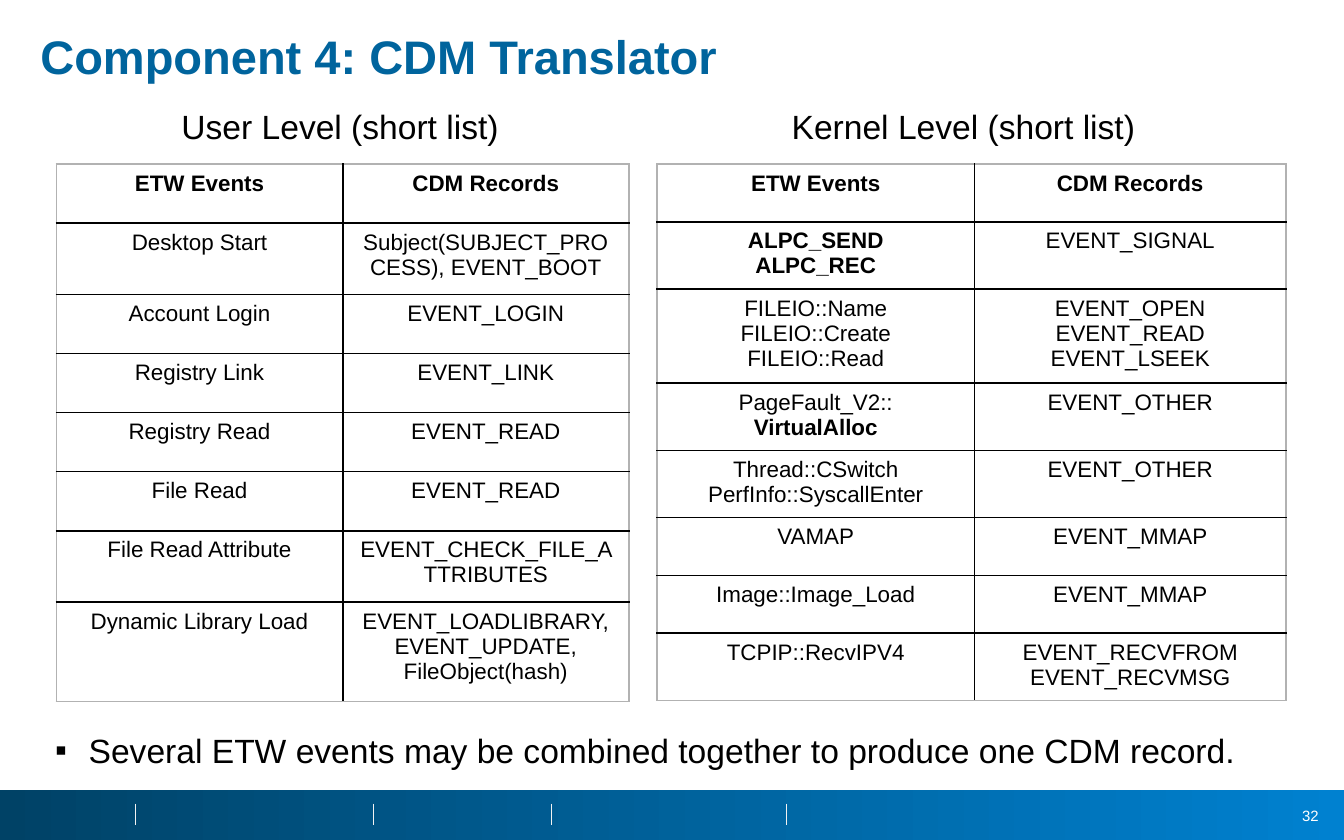
from pptx import Presentation
from pptx.dml.color import RGBColor
from pptx.enum.shapes import MSO_CONNECTOR, MSO_SHAPE
from pptx.enum.text import MSO_ANCHOR, PP_ALIGN
from pptx.oxml.ns import qn
from pptx.util import Inches, Pt
from lxml.etree import SubElement

BLACK = RGBColor(0, 0, 0)
WHITE = RGBColor(255, 255, 255)
BLUE = RGBColor(0x00, 0x64, 0x9D)
NAVY = RGBColor(0x00, 0x42, 0x66)
SKY = RGBColor(0x00, 0x81, 0xD0)
PALE = RGBColor(0xF2, 0xF2, 0xF2)
GREY = RGBColor(0xB2, 0xB2, 0xB2)

# A leading * marks a bold line.
HEAD = ("*ETW Events", "*CDM Records")
USER = [
    (0.44, *HEAD),
    (0.53, "Desktop Start", "Subject(SUBJECT_PROCESS), EVENT_BOOT"),
    (0.44, "Account Login", "EVENT_LOGIN"),
    (0.44, "Registry Link", "EVENT_LINK"),
    (0.44, "Registry Read", "EVENT_READ"),
    (0.44, "File Read", "EVENT_READ"),
    (0.53, "File Read Attribute", "EVENT_CHECK_FILE_ATTRIBUTES"),
    (0.74, "Dynamic Library Load",
     "EVENT_LOADLIBRARY, EVENT_UPDATE, FileObject(hash)"),
]
KERNEL = [
    (0.43, *HEAD),
    (0.5, "*ALPC_SEND\n*ALPC_REC", "EVENT_SIGNAL"),
    (0.7, "FILEIO::Name\nFILEIO::Create\nFILEIO::Read",
     "EVENT_OPEN\nEVENT_READ\nEVENT_LSEEK"),
    (0.5, "PageFault_V2::\n*VirtualAlloc", "EVENT_OTHER"),
    (0.5, "Thread::CSwitch\nPerfInfo::SyscallEnter", "EVENT_OTHER"),
    (0.43, "VAMAP", "EVENT_MMAP"),
    (0.43, "Image::Image_Load", "EVENT_MMAP"),
    (0.5, "TCPIP::RecvIPV4", "EVENT_RECVFROM\nEVENT_RECVMSG"),
]


def style(para, size, color=BLACK, bold=False, align=PP_ALIGN.LEFT):
    para.alignment = align
    font = para.font
    font.name, font.size, font.bold = "Arial", Pt(size), bold
    font.color.rgb = color


def add_title(slide, text):
    title = slide.shapes.title
    title.left, title.top = Inches(0.2), Inches(0.2)
    title.width, title.height = Inches(9.59), Inches(0.36)
    frame = title.text_frame
    frame.text = text
    frame.vertical_anchor = MSO_ANCHOR.TOP
    frame.paragraphs[0].line_spacing = 0.9
    style(frame.paragraphs[0], 25.2, BLUE, True)


def add_text(slide, text, x, y, w, h, inset=0.05):
    box = slide.shapes.add_textbox(Inches(x), Inches(y), Inches(w), Inches(h))
    frame = box.text_frame
    frame.word_wrap = True
    frame.margin_left = frame.margin_right = Inches(inset)
    frame.text = text
    return frame


def add_label(slide, text, x, w):
    frame = add_text(slide, text, x, 0.74, w, 0.4)
    frame.word_wrap = False
    style(frame.paragraphs[0], 18)


def add_bullet(slide, text):
    para = add_text(slide, text, 0.36, 5.38, 9.59, 0.47).paragraphs[0]
    props = para._p.get_or_add_pPr()
    props.set("marL", str(Inches(0.25)))
    props.set("indent", str(-Inches(0.25)))
    SubElement(props, qn("a:buFont"), typeface="Arial")
    SubElement(props, qn("a:buChar"), char="▪")
    style(para, 18)


def add_edge(cell, side, color):
    line = SubElement(cell._tc.get_or_add_tcPr(), qn(f"a:{side}"),
                      w=str(Pt(1)))
    fill = SubElement(line, qn("a:solidFill"))
    SubElement(fill, qn("a:srgbClr"), val=str(color))


def fill_cell(cell, text, edges):
    """Write the lines of a cell; edges maps each side to its colour."""
    for side, color in edges.items():
        add_edge(cell, side, color)
    cell.fill.background()
    cell.text = text.replace("*", "")
    for para, line in zip(cell.text_frame.paragraphs, text.split("\n")):
        style(para, 12, bold=line.startswith("*"), align=PP_ALIGN.CENTER)


def add_grid(slide, rows, x, widths):
    height = sum(row[0] for row in rows)
    table = slide.shapes.add_table(
        len(rows), len(widths), Inches(x), Inches(1.22),
        Inches(sum(widths)), Inches(height)).table
    table.first_row = table.horz_banding = False
    for col, width in zip(table.columns, widths):
        col.width = Inches(width)
    for r, (tall, *texts) in enumerate(rows):
        table.rows[r].height = Inches(tall)
        for c, text in enumerate(texts):
            outer = {"lnL": c == 0, "lnR": c == len(widths) - 1,
                     "lnT": r == 0, "lnB": r == len(rows) - 1}
            edges = {side: GREY if out else BLACK
                     for side, out in outer.items()}
            fill_cell(table.cell(r, c), text, edges)


def add_footer(slide, number):
    bar = slide.shapes.add_shape(MSO_SHAPE.RECTANGLE, 0, Inches(5.88),
                                 Inches(10), Inches(0.37))
    bar.shadow.inherit = False
    bar.line.fill.background()
    bar.fill.gradient()
    bar.fill.gradient_angle = 0
    for stop, color, pos in zip(bar.fill.gradient_stops, (NAVY, SKY), (0, 1)):
        stop.color.rgb, stop.position = color, pos
    for x in (1.01, 2.78, 4.1, 5.85):
        tick = slide.shapes.add_connector(
            MSO_CONNECTOR.STRAIGHT, Inches(x), Inches(5.98),
            Inches(x), Inches(6.14))
        tick.line.color.rgb, tick.line.width = PALE, Pt(0.25)
        SubElement(tick._element.spPr, qn("a:effectLst"))
    frame = add_text(slide, number, 9.49, 5.95, 0.42, 0.24, 0.1)
    frame.vertical_anchor = MSO_ANCHOR.MIDDLE
    style(frame.paragraphs[0], 8, WHITE, align=PP_ALIGN.RIGHT)


def main():
    deck = Presentation()
    deck.slide_width, deck.slide_height = Inches(10), Inches(6.25)
    slide = deck.slides.add_slide(deck.slide_layouts[5])
    add_footer(slide, "32")
    add_title(slide, "Component 4: CDM Translator")
    add_label(slide, "User Level (short list)", 1.3, 2.51)
    add_grid(slide, USER, 0.42, (2.13, 2.13))
    add_label(slide, "Kernel Level (short list)", 5.84, 2.82)
    add_grid(slide, KERNEL, 4.89, (2.36, 2.32))
    add_bullet(slide, "Several ETW events may be combined together "
                      "to produce one CDM record.")
    deck.save("out.pptx")


if __name__ == "__main__":
    main()
